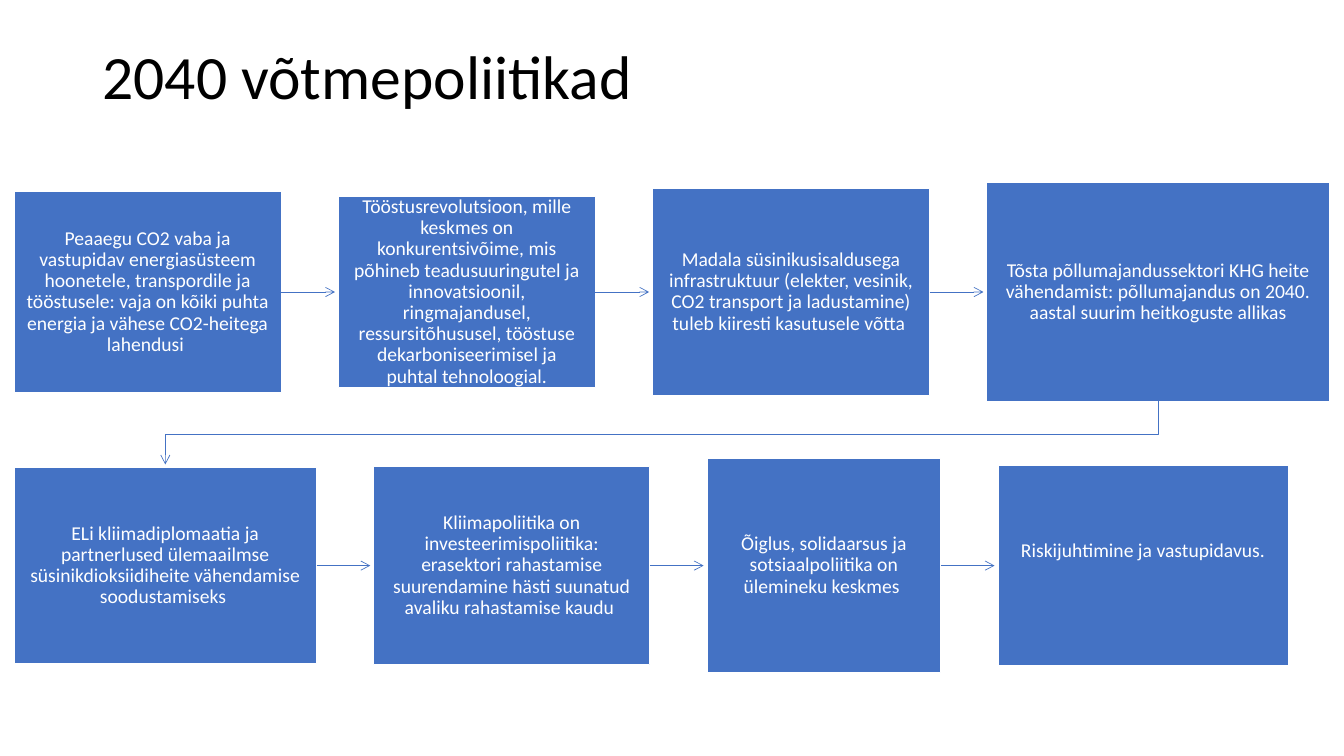
from lxml import etree
from pptx import Presentation
from pptx.dml.color import RGBColor
from pptx.enum import shapes, text
from pptx.oxml.ns import qn
from pptx.util import Pt

BLUE, WHITE, BLACK = "4472C4", "FFFFFF", "000000"
GAP = 40.8          # between neighbouring boxes
CLEARANCE = 2.4     # between an arrowhead and the box it points to
LEFT = 10.1

# Each step: width, height, wording, extra space below the wording
FIRST_ROW = [
    (190.8, 143.3, "Peaaegu CO2 vaba ja vastupidav energiasüsteem hoonetele, transpordile ja "
                   "tööstusele: vaja on kõiki puhta energia ja vähese CO2-heitega lahendusi ", 0),
    (183.6, 136.8, "Tööstusrevolutsioon, mille keskmes on konkurentsivõime, mis põhineb "
                   "teadusuuringutel ja innovatsioonil, ringmajandusel, ressursitõhususel, "
                   "tööstuse dekarboniseerimisel ja puhtal tehnoloogial.", 0),
    (198, 147.6, "Madala süsinikusisaldusega infrastruktuur (elekter, vesinik, CO2 transport "
                 "ja ladustamine) tuleb kiiresti kasutusele võtta ", 0),
    (244.8, 156.2, "Tõsta põllumajandussektori KHG heite vähendamist: põllumajandus on 2040. "
                   "aastal suurim heitkoguste allikas", 0),
]
SECOND_ROW = [
    (216, 139.7, "ELi kliimadiplomaatia ja partnerlused ülemaailmse süsinikdioksiidiheite "
                 "vähendamise soodustamiseks ", 0),
    (197.3, 141.8, "Kliimapoliitika on investeerimispoliitika: erasektori rahastamise "
                   "suurendamine hästi suunatud avaliku rahastamise kaudu ", 0),
    (167, 152.6, "Õiglus, solidaarsus ja sotsiaalpoliitika on ülemineku keskmes ", 0),
    (207.4, 143.3, "Riskijuhtimine ja vastupidavus.", 20),
]


def color(value):
    return RGBColor.from_string(value)


def write(shape, wording, size, fill, align, insets):
    """Set the wording of a shape; insets are left, top, right, bottom."""
    frame = shape.text_frame
    frame.word_wrap = True
    frame.auto_size = text.MSO_AUTO_SIZE.NONE
    frame.vertical_anchor = text.MSO_ANCHOR.MIDDLE
    (frame.margin_left, frame.margin_top,
     frame.margin_right, frame.margin_bottom) = map(Pt, insets)
    paragraph = frame.paragraphs[0]
    paragraph.alignment = align
    paragraph.line_spacing = 0.9
    paragraph.space_before = Pt(0)
    run = paragraph.add_run()
    run.text = wording
    run.font.name = "Calibri"
    run.font.size = Pt(size)
    run.font.color.rgb = color(fill)


def style_arrow(shape):
    shape.line.color.rgb = color(BLUE)
    shape.line.width = Pt(0.5)
    etree.SubElement(shape.line._get_or_add_ln(), qn("a:tailEnd"), type="arrow")
    etree.SubElement(shape._element.spPr, qn("a:effectLst"))


def add_title(slide, left, top, width, height):
    title = slide.shapes.title
    title.left, title.top, title.width, title.height = map(Pt, (left, top, width, height))
    write(title, "2040 võtmepoliitikad", size=44, fill=BLACK,
          align=text.PP_ALIGN.LEFT, insets=(7.2, 3.6, 7.2, 52))


def add_step(slide, left, top, width, height, wording, space_below):
    box = slide.shapes.add_shape(shapes.MSO_SHAPE.RECTANGLE,
                                 *map(Pt, (left, top, width, height)))
    box.shadow.inherit = False
    box.fill.solid()
    box.fill.fore_color.rgb = color(BLUE)
    box.line.color.rgb = color(WHITE)
    box.line.width = Pt(1)
    write(box, wording, size=14, fill=WHITE, align=text.PP_ALIGN.CENTER,
          insets=(8.6, 9.4, 8.6, 9.4 + space_below))
    return box


def add_row(slide, left, middle, steps):
    """Place steps side by side, centred on one height, with arrows between them."""
    boxes = []
    for width, height, wording, space_below in steps:
        box = add_step(slide, left, middle - height / 2, width, height, wording, space_below)
        if boxes:
            arrow = slide.shapes.add_connector(
                shapes.MSO_CONNECTOR.STRAIGHT, Pt(left - GAP), Pt(middle),
                Pt(left - CLEARANCE), Pt(middle))
            arrow.begin_connect(boxes[-1], 3)
            style_arrow(arrow)
        boxes.append(box)
        left += width + GAP
    return boxes


def add_row_link(slide, source, target):
    """Lead from the bottom of one box down and across to the top of another."""
    start_x, end_x = (box.left + box.width // 2 for box in (source, target))
    start_y = source.top + source.height
    end_y = target.top - Pt(CLEARANCE)
    turn_y = (start_y + target.top) // 2
    builder = slide.shapes.build_freeform(start_x, start_y)
    builder.add_line_segments([(start_x, turn_y), (end_x, turn_y), (end_x, end_y)], close=False)
    link = builder.convert_to_shape()
    link.fill.background()
    style_arrow(link)


def main():
    presentation = Presentation()
    presentation.slide_width, presentation.slide_height = Pt(960), Pt(540)
    slide = presentation.slides.add_slide(presentation.slide_layouts[5])
    add_title(slide, 66, 28.8, 828, 104.4)
    first = add_row(slide, LEFT, 208.6, FIRST_ROW)
    second = add_row(slide, LEFT, 404, SECOND_ROW)
    add_row_link(slide, first[-1], second[0])
    presentation.save("out.pptx")


if __name__ == "__main__":
    main()
